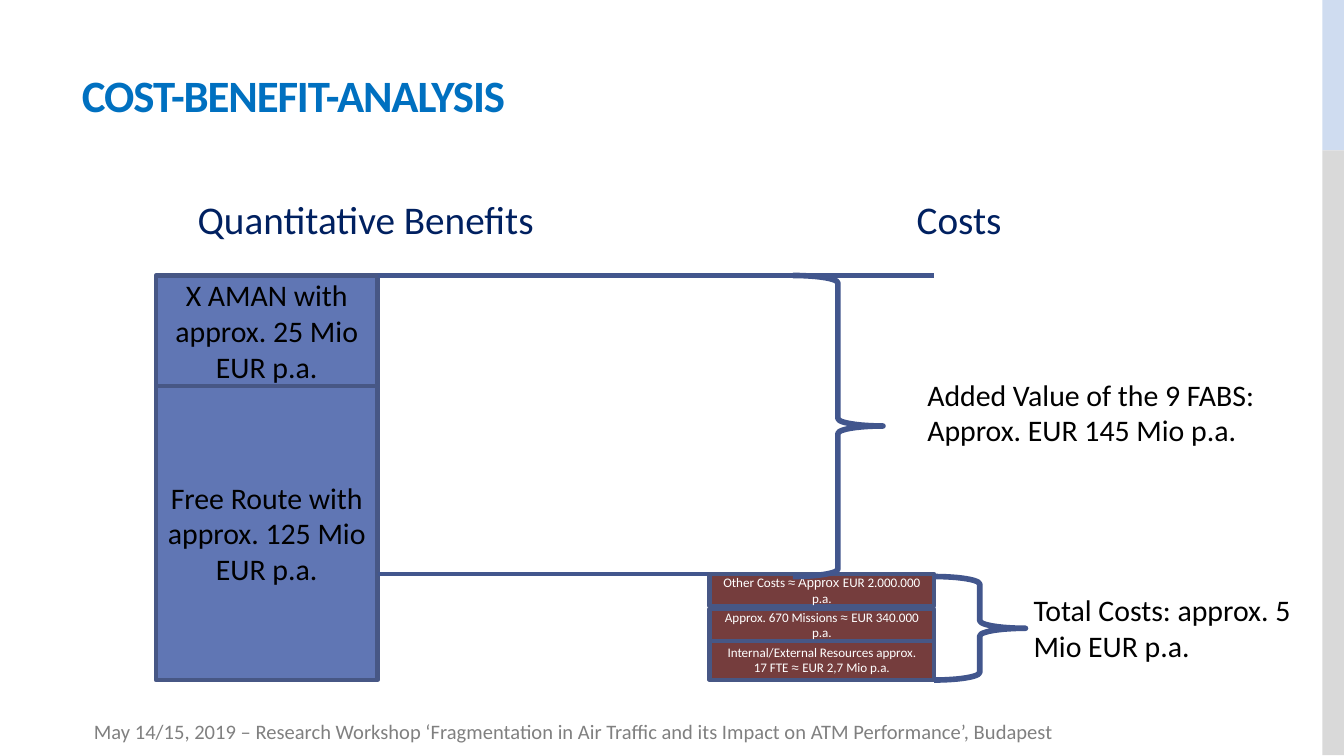
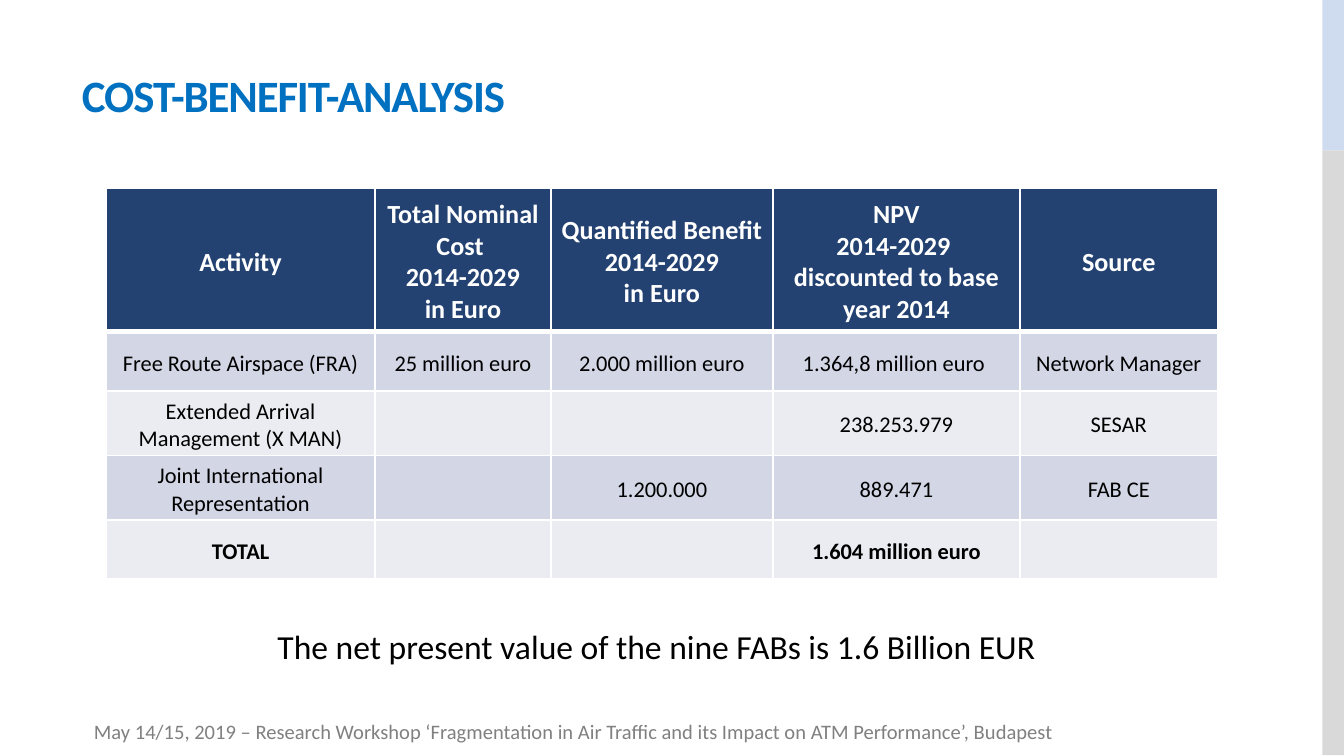
from pptx import Presentation
from pptx.dml.color import RGBColor
from pptx.enum.shapes import MSO_CONNECTOR as Connector, MSO_SHAPE as Shape
from pptx.enum.text import MSO_ANCHOR as Anchor, MSO_AUTO_SIZE as AutoSize, PP_ALIGN as Align
from pptx.oxml.ns import qn
from pptx.util import Inches, Pt
from lxml import etree

COLORS = {
    "title": "0070C0", "heading": "002060", "footer": "808080",
    "black": "000000", "white": "FFFFFF",
    "band_top": "CFDCF0", "band_low": "D9D9D9",
    "benefit": "6076B4", "cost": "753D3D", "outline": "475785", "line": "42568D",
    "header": "234271", "row_dark": "D2D6E5", "row_light": "EAECF2",
}
FONT = "Calibri"
SIGN_FONT = "Arial"
TITLE = "COST-BENEFIT-ANALYSIS"
FOOTER = ("May 14/15, 2019 – Research Workshop ‘Fragmentation in Air Traffic "
          "and its Impact on ATM Performance’, Budapest")
TIGHT = (0.07, 0.04, 0.07, 0.04)
BLOCK = (0.08, 0.04, 0.08, 0.04)
ROOMY = (0.1, 0.05, 0.1, 0.05)

# Geometry of the cost and benefit columns
BENEFIT_LEFT, BENEFIT_WIDTH = 1.16, 1.65
COST_LEFT, COST_WIDTH = 5.28, 1.67
COST_RIGHT = COST_LEFT + COST_WIDTH
TOP, COST_TOP, BOTTOM = 2.05, 4.27, 5.06

HEADERS = [
    ["Activity"],
    ["Total Nominal Cost \n2014-2029", "in Euro"],
    ["Quantified Benefit", "2014-2029", "in Euro"],
    ["NPV", "2014-2029 \ndiscounted to base year 2014"],
    ["Source"],
]
ROWS = [
    ["Free Route Airspace (FRA)", "25 million euro", "2.000 million euro",
     "1.364,8 million euro ", "Network Manager"],
    ["Extended Arrival Management (X MAN)", "", "", "238.253.979", "SESAR"],
    ["Joint International Representation", "", "1.200.000", "889.471", "FAB CE"],
    ["TOTAL", "", "", "1.604 million euro", ""],
]
COLUMN_WIDTHS = [2, 1.31, 1.65, 1.84, 1.47]
ROW_HEIGHTS = [1.07, 0.44, 0.48, 0.48, 0.44]


def rgb(name):
    return RGBColor.from_string(COLORS[name])


def add_span(para, text, size, color, bold=False, font=FONT):
    for index, line in enumerate(text.split("\n")):
        if index:
            para.add_line_break()
        span = para.add_run()
        span.text = line
        span.font.name, span.font.size, span.font.bold = font, Pt(size), bold
        span.font.color.rgb = rgb(color)
    return span


def set_frame(frame, insets, anchor=Anchor.TOP):
    frame.word_wrap = True
    frame.auto_size = AutoSize.NONE
    frame.vertical_anchor = anchor
    (frame.margin_left, frame.margin_top,
     frame.margin_right, frame.margin_bottom) = map(Inches, insets)


def place(item, left, top, width, height):
    item.left, item.top = Inches(left), Inches(top)
    item.width, item.height = Inches(width), Inches(height)


def add_paragraphs(frame, lines, size, color, align=Align.LEFT, bold=False):
    for index, line in enumerate(lines):
        para = frame.add_paragraph() if index else frame.paragraphs[0]
        para.alignment = align
        para.font.size = Pt(size)
        if line:
            add_span(para, line, size, color, bold)


def add_text(page, at, lines, size, color="black", align=Align.LEFT, insets=TIGHT):
    box = page.shapes.add_textbox(*map(Inches, at))
    set_frame(box.text_frame, insets)
    add_paragraphs(box.text_frame, lines, size, color, align)


def add_figure(page, kind, at, fill=None, line=None, weight=2.25):
    figure = page.shapes.add_shape(kind, *map(Inches, at))
    figure.shadow.inherit = False
    if fill:
        figure.fill.solid()
        figure.fill.fore_color.rgb = rgb(fill)
    else:
        figure.fill.background()
    if line:
        figure.line.color.rgb = rgb(line)
        figure.line.width = Pt(weight)
    else:
        figure.line.fill.background()
    return figure


def add_block(page, at, fill, spans, size, color):
    """Outlined rectangle; spans are (text, font) pairs in one paragraph."""
    block = add_figure(page, Shape.RECTANGLE, at, fill, "outline")
    set_frame(block.text_frame, BLOCK, Anchor.MIDDLE)
    para = block.text_frame.paragraphs[0]
    para.alignment = Align.CENTER
    for text, font in spans:
        add_span(para, text, size, color, font=font)


def add_level(page, y):
    level = page.shapes.add_connector(
        Connector.STRAIGHT, Inches(BENEFIT_LEFT + BENEFIT_WIDTH), Inches(y),
        Inches(COST_RIGHT), Inches(y))
    level.line.color.rgb = rgb("line")
    level.line.width = Pt(2.25)
    etree.SubElement(level._element.spPr, qn("a:effectLst"))


def add_page(deck, layout):
    """Page with the shared bands, title and footer."""
    page = deck.slides.add_slide(deck.slide_layouts[layout])
    add_figure(page, Shape.RECTANGLE, (9.84, 0, 0.16, 1.12), "band_top")
    add_figure(page, Shape.RECTANGLE, (9.84, 1.12, 0.16, 4.5), "band_low")
    title = page.shapes.title
    place(title, 0.51, 0.45, 6.33, 0.47)
    set_frame(title.text_frame, ROOMY)
    para = title.text_frame.paragraphs[0]
    para.alignment = Align.LEFT
    span = add_span(para, TITLE, 24, "title", bold=True)
    span._r.get_or_add_rPr().set("spc", "-60")
    add_text(page, (0.6, 5.3, 8.65, 0.26), [FOOTER], 11, "footer", insets=ROOMY)
    return page


def add_headings(page):
    """Column headings in the body placeholder, on an even tab grid."""
    body = page.placeholders[1]
    place(body, 0.37, 1.4, 9.22, 3.42)
    set_frame(body.text_frame, (0.03, 0.05, 0.03, 0.05))
    para = body.text_frame.paragraphs[0]
    props = para._p.get_or_add_pPr()
    props.set("marL", "0")
    props.set("indent", "0")
    props.set("defTabSz", str(Inches(1.07)))
    etree.SubElement(props, qn("a:buNone"))
    para.space_before = Pt(0)
    para.space_after = Pt(6)
    add_span(para, "\tQuantitative Benefits\t\t\tCosts", 21, "heading")


def set_borders(cell, top, bottom):
    props = cell._tc.get_or_add_tcPr()
    for side, weight in (("L", 1), ("R", 1), ("T", top), ("B", bottom)):
        edge = etree.SubElement(props, qn("a:ln" + side), w=str(Pt(weight)))
        fill = etree.SubElement(edge, qn("a:solidFill"))
        etree.SubElement(fill, qn("a:srgbClr"), val=COLORS["white"])


def fill_cell(cell, lines, row):
    header = row == 0
    set_borders(cell, 3 if row == 1 else 1, 3 if header else 1)
    cell.fill.solid()
    cell.fill.fore_color.rgb = rgb(
        "header" if header else "row_dark" if row % 2 else "row_light")
    cell.vertical_anchor = Anchor.MIDDLE
    cell.margin_left = cell.margin_right = Inches(0.06)
    cell.margin_top, cell.margin_bottom = Inches(0.03), 0
    add_paragraphs(cell.text_frame, lines, 14 if header else 12,
                   "white" if header else "black", Align.CENTER,
                   bold=header or row == len(ROWS))
    if lines[-1]:
        cell.text_frame.paragraphs[-1].space_after = Pt(6)


def add_value_table(page):
    grid = page.shapes.add_table(
        len(ROW_HEIGHTS), len(COLUMN_WIDTHS), Inches(0.79), Inches(1.4),
        Inches(sum(COLUMN_WIDTHS)), Inches(sum(ROW_HEIGHTS))).table
    for column, width in zip(grid.columns, COLUMN_WIDTHS):
        column.width = Inches(width)
    for row, height in zip(grid.rows, ROW_HEIGHTS):
        row.height = Inches(height)
    content = [HEADERS] + [[[text] for text in row] for row in ROWS]
    for r, row in enumerate(content):
        for c, lines in enumerate(row):
            fill_cell(grid.cell(r, c), lines, r)


def build_comparison(deck):
    page = add_page(deck, 1)
    add_headings(page)

    # Benefits
    for top, height, text in (
            (2.87, 2.19, "Free Route with approx. 125 Mio EUR p.a."),
            (TOP, 0.82, "X AMAN with approx. 25 Mio EUR p.a.")):
        add_block(page, (BENEFIT_LEFT, top, BENEFIT_WIDTH, height), "benefit",
                  [(text, FONT)], 16, "black")

    # Levels and costs
    for y in (TOP, COST_TOP):
        add_level(page, y)
    for top, height, label, sign, amount in (
            (4.76, 0.3, "Internal/External Resources approx. 17 FTE ", "≈ ", "EUR 2,7 Mio p.a."),
            (4.53, 0.24, "Approx. 670 Missions ", "≈ ", "EUR 340.000 p.a."),
            (COST_TOP, 0.24, "Other Costs ", "≈ Approx ", "EUR 2.000.000 p.a.")):
        add_block(page, (COST_LEFT, top, COST_WIDTH, height), "cost",
                  [(label, FONT), (sign, SIGN_FONT), (amount, FONT)], 7, "white")

    # Braces and their captions
    for at in ((5.9, TOP, 0.67, 2.24), (COST_RIGHT, 4.29, 0.68, BOTTOM - 4.29)):
        add_figure(page, Shape.RIGHT_BRACE, at, line="line", weight=3)
    add_text(page, (6.83, 2.76, 2.92, 0.61),
             ["Added Value of the 9 FABS:", "Approx. EUR 145 Mio p.a."], 16)
    add_text(page, (7.62, 4.36, 2.17, 0.61), ["Total Costs: approx. 5 Mio EUR p.a."], 16)


def build_present_value(deck):
    page = add_page(deck, 5)
    add_value_table(page)
    add_text(page, (1.11, 4.62, 7.61, 0.38),
             ["The net present value of the nine FABs is 1.6 Billion EUR "],
             18, align=Align.CENTER)


def main():
    deck = Presentation()
    deck.slide_width, deck.slide_height = Inches(10), Inches(10 * 9 / 16)
    build_comparison(deck)
    build_present_value(deck)
    deck.save("out.pptx")


if __name__ == "__main__":
    main()
